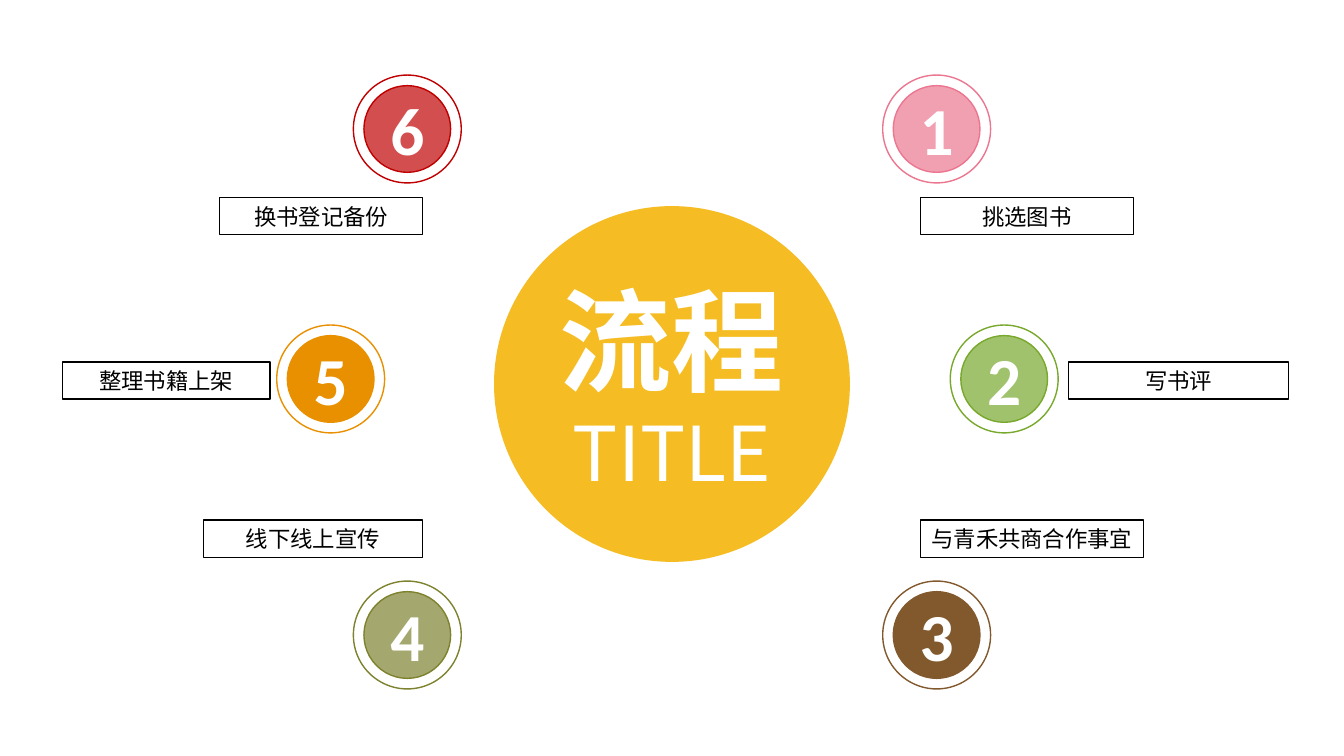
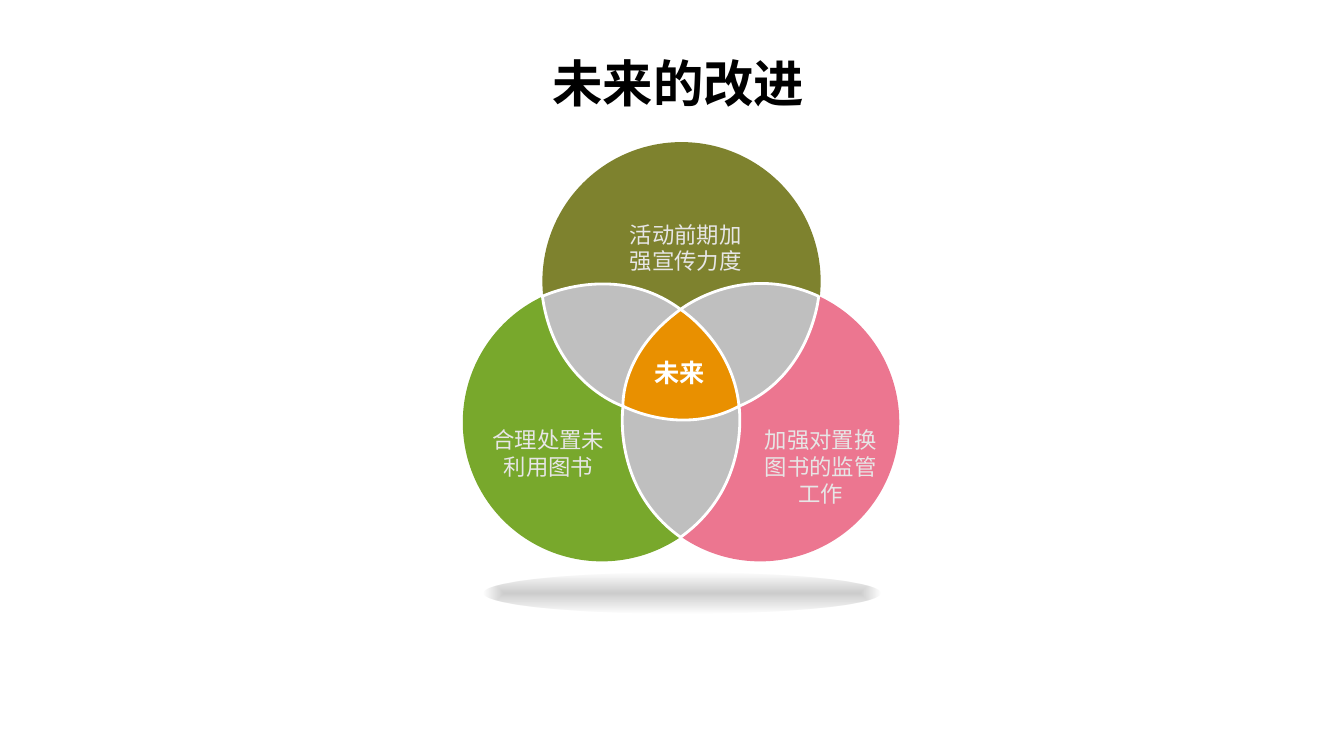
from lxml import etree
from pptx import Presentation
from pptx import util as u
from pptx.dml.color import RGBColor
from pptx.enum import shapes, text
from pptx.oxml import parse_xml
from pptx.oxml.ns import nsdecls, qn

CJK, LATIN = "Noto Sans CJK SC", "Calibri"
WHITE, BLACK = RGBColor(255, 255, 255), RGBColor(0, 0, 0)
PALE, GREY = RGBColor(0xE7, 0xE6, 0xE6), RGBColor(0xBF, 0xBF, 0xBF)
YELLOW, ORANGE = RGBColor(0xF5, 0xBD, 0x23), RGBColor(0xE9, 0x90, 0x00)
PINK, RED = RGBColor(0xEC, 0x76, 0x90), RGBColor(0xC0, 0x00, 0x00)
GREEN, OLIVE = RGBColor(0x78, 0xA8, 0x2C), RGBColor(0x7E, 0x82, 0x2E)
BROWN = RGBColor(0x82, 0x58, 0x2D)

WIDTH, HEIGHT = 13.33, 7.5
UNITS_PER_INCH = 1000

# Process slide: number, centre, colour, opacity of the disc
HUB_CENTRE, HUB_SIZE = (WIDTH / 2, 3.81), 3.53
HUB_TEXT_SIZE = (2.49, 1.9)
HUB_LINES = [("流程", 80, True), ("TITLE", 54, False)]
RING_SIZE, DISC_SIZE = 1.07, 0.86
NUMBER_SIZE = (0.61, 0.91)
BADGES = [
    ("3", (9.29, 6.3), BROWN, 100),
    ("4", (4.04, 6.3), OLIVE, 69),
    ("2", (9.96, 3.76), GREEN, 69),
    ("5", (3.28, 3.76), ORANGE, 100),
    ("1", (9.29, 1.28), PINK, 69),
    ("6", (4.04, 1.28), RED, 69),
]
LABEL_HEIGHT = 0.37
LABEL_ROWS = {"upper": 1.96, "middle": 3.59, "lower": 5.16}
LABELS = [  # text, left, row, width
    ("换书登记备份", 2.18, "upper", 2.01),
    ("整理书籍上架", 0.62, "middle", 2.06),
    ("写书评", 10.6, "middle", 2.18),
    ("挑选图书", 9.13, "upper", 2.11),
    ("线下线上宣传", 2.02, "lower", 2.17),
    ("与青禾共商合作事宜", 9.13, "lower", 2.21),
]

# Venn slide: circle centres, then petals as a start and cubic curves
VENN_SIZE = 2.76
VENN_CIRCLES = [((6.76, 2.79), OLIVE), ((5.97, 4.19), GREEN), ((7.54, 4.19), PINK)]
TOP, LEFT, RIGHT = (6.75, 3.07), (6.18, 4.03), (7.33, 4.03)
OUTER_LEFT, OUTER_RIGHT, BOTTOM = (5.38, 2.94), (8.12, 2.94), (6.75, 5.33)
PETALS = [  # start, curves, fill, outline
    (TOP, [(TOP, (7.3, 3.43), RIGHT), ((6.77, 4.34), LEFT, LEFT),
           ((6.19, 3.45), TOP, TOP)], ORANGE, None),
    (TOP, [(TOP, (7.36, 2.59), OUTER_RIGHT), (OUTER_RIGHT, (8.05, 3.73), RIGHT),
           ((7.27, 3.4), TOP, TOP)], GREY, WHITE),
    (LEFT, [(LEFT, (5.5, 3.81), OUTER_LEFT), (OUTER_LEFT, (6.11, 2.59), TOP),
            ((6.14, 3.51), LEFT, LEFT)], GREY, WHITE),
    (LEFT, [(LEFT, (6.76, 4.34), RIGHT), (RIGHT, (7.45, 4.83), BOTTOM),
            ((6.06, 4.84), LEFT, LEFT)], GREY, WHITE),
]
FLOOR_SHADOW = (4.8, 5.68, 3.93, 0.41)
LEFT_ALIGN, CENTRE = text.PP_ALIGN.LEFT, text.PP_ALIGN.CENTER
VENN_TEXTS = [  # text, box, size, colour, bold, alignment, wrap
    ("未来", (6.39, 3.5, 0.7, 0.4), 18, WHITE, True, LEFT_ALIGN, False),
    ("加强对置换图书的监管工作", (7.44, 4.18, 1.4, 0.91), 16, PALE, False, CENTRE, True),
    ("合理处置未利用图书", (4.74, 4.18, 1.4, 0.64), 16, PALE, False, CENTRE, True),
    ("活动前期加强宣传力度", (6.1, 2.14, 1.4, 0.64), 16, PALE, False, CENTRE, True),
    ("未来的改进", (5.38, 0.47, 3, 0.71), 36, BLACK, True, LEFT_ALIGN, True),
]


def inches(box):
    return [u.Inches(length) for length in box]


def box_around(centre, width, height):
    return centre[0] - width / 2, centre[1] - height / 2, width, height


def paint(shape, fill=None, line=None, line_width=1, opacity=100):
    shape.shadow.inherit = False
    if fill is None:
        shape.fill.background()
    else:
        shape.fill.solid()
        shape.fill.fore_color.rgb = fill
        if opacity < 100:
            color = shape.fill._xPr.find(qn("a:solidFill"))[0]
            etree.SubElement(color, qn("a:alpha"), val=str(opacity * 1000))
    if line is None:
        shape.line.fill.background()
    else:
        shape.line.color.rgb = line
        shape.line.width = u.Pt(line_width)


def add_preset(container, preset, box, **style):
    shape = container.add_shape(preset, *inches(box))
    paint(shape, **style)
    return shape


def add_circle(container, centre, size, **style):
    box = box_around(centre, size, size)
    return add_preset(container, shapes.MSO_SHAPE.OVAL, box, **style)


def add_run(paragraph, words, size, color, bold=False, font_name=CJK, align=CENTRE):
    paragraph.alignment = align
    run = paragraph.add_run()
    run.text = words
    font = run.font
    font.size, font.bold, font.name = u.Pt(size), bold, font_name
    font.color.rgb = color
    latin = run._r.rPr.find(qn("a:latin"))
    latin.addnext(parse_xml(f'<a:ea {nsdecls("a")} typeface="{font_name}"/>'))


def centred_frame(shape):
    """Text frame without margins, anchored in the middle."""
    frame = shape.text_frame
    frame.margin_left = frame.margin_right = frame.margin_top = frame.margin_bottom = 0
    frame.vertical_anchor = text.MSO_ANCHOR.MIDDLE
    frame.word_wrap = True
    return frame


def add_petal(slide, start, curves, fill, line):
    """Closed outline: lay out all curve points, then join each three into a cubic curve."""
    builder = slide.shapes.build_freeform(
        *(UNITS_PER_INCH * value for value in start), scale=u.Inches(1) / UNITS_PER_INCH)
    builder.add_line_segments(
        [(UNITS_PER_INCH * x, UNITS_PER_INCH * y) for curve in curves for x, y in curve],
        close=True)
    petal = builder.convert_to_shape()
    segments = list(petal._element.iter(qn("a:lnTo")))
    for first in range(0, 3 * len(curves), 3):
        cubic = etree.Element(qn("a:cubicBezTo"))
        segments[first].addprevious(cubic)
        for segment in segments[first:first + 3]:
            cubic.append(segment[0])
            segment.getparent().remove(segment)
    paint(petal, fill, line, line_width=2)


def fade_to_edge(shape):
    """Black fade from 20 % opacity in the middle to none."""
    stops = "".join(
        f'<a:gs pos="{position}"><a:srgbClr val="{BLACK}"><a:alpha val="{alpha}"/></a:srgbClr></a:gs>'
        for position, alpha in ((0, 20000), (100000, 0)))
    gradient = parse_xml(
        f'<a:gradFill {nsdecls("a")} rotWithShape="1"><a:gsLst>{stops}</a:gsLst>'
        '<a:path path="shape"><a:fillToRect l="50000" t="50000" r="50000" b="50000"/>'
        '</a:path></a:gradFill>')
    properties = shape._element.spPr
    properties.replace(properties.find(qn("a:solidFill")), gradient)


def add_badge(slide, number, centre, color, opacity):
    group = slide.shapes.add_group_shape().shapes
    add_circle(group, centre, RING_SIZE, fill=WHITE, line=color, opacity=69)
    add_circle(group, centre, DISC_SIZE, fill=color, line=color, opacity=opacity)
    number_box = group.add_textbox(*inches(box_around(centre, *NUMBER_SIZE)))
    add_run(centred_frame(number_box).paragraphs[0], number, 48, WHITE, True, LATIN)


def build_process(slide):
    add_circle(slide.shapes, HUB_CENTRE, HUB_SIZE, fill=YELLOW)
    hub_box = slide.shapes.add_textbox(*inches(box_around(HUB_CENTRE, *HUB_TEXT_SIZE)))
    frame = centred_frame(hub_box)
    for index, (words, size, bold) in enumerate(HUB_LINES):
        paragraph = frame.add_paragraph() if index else frame.paragraphs[0]
        add_run(paragraph, words, size, WHITE, bold)
    for badge in BADGES:
        add_badge(slide, *badge)
    for words, left, row, width in LABELS:
        box = left, LABEL_ROWS[row], width, LABEL_HEIGHT
        label = add_preset(slide.shapes, shapes.MSO_SHAPE.RECTANGLE, box, line=BLACK)
        add_run(centred_frame(label).paragraphs[0], words, 16, BLACK)


def build_venn(slide):
    for centre, color in VENN_CIRCLES:
        add_circle(slide.shapes, centre, VENN_SIZE, fill=color)
    for petal in PETALS:
        add_petal(slide, *petal)
    fade_to_edge(add_preset(slide.shapes, shapes.MSO_SHAPE.OVAL, FLOOR_SHADOW, fill=BLACK))
    for words, box, size, color, bold, align, wrap in VENN_TEXTS:
        frame = slide.shapes.add_textbox(*inches(box)).text_frame
        frame.word_wrap = wrap
        add_run(frame.paragraphs[0], words, size, color, bold, align=align)


def main():
    presentation = Presentation()
    presentation.slide_width, presentation.slide_height = inches((WIDTH, HEIGHT))
    blank = presentation.slide_layouts[6]
    for build in (build_process, build_venn):
        build(presentation.slides.add_slide(blank))
    presentation.save("out.pptx")


if __name__ == "__main__":
    main()
